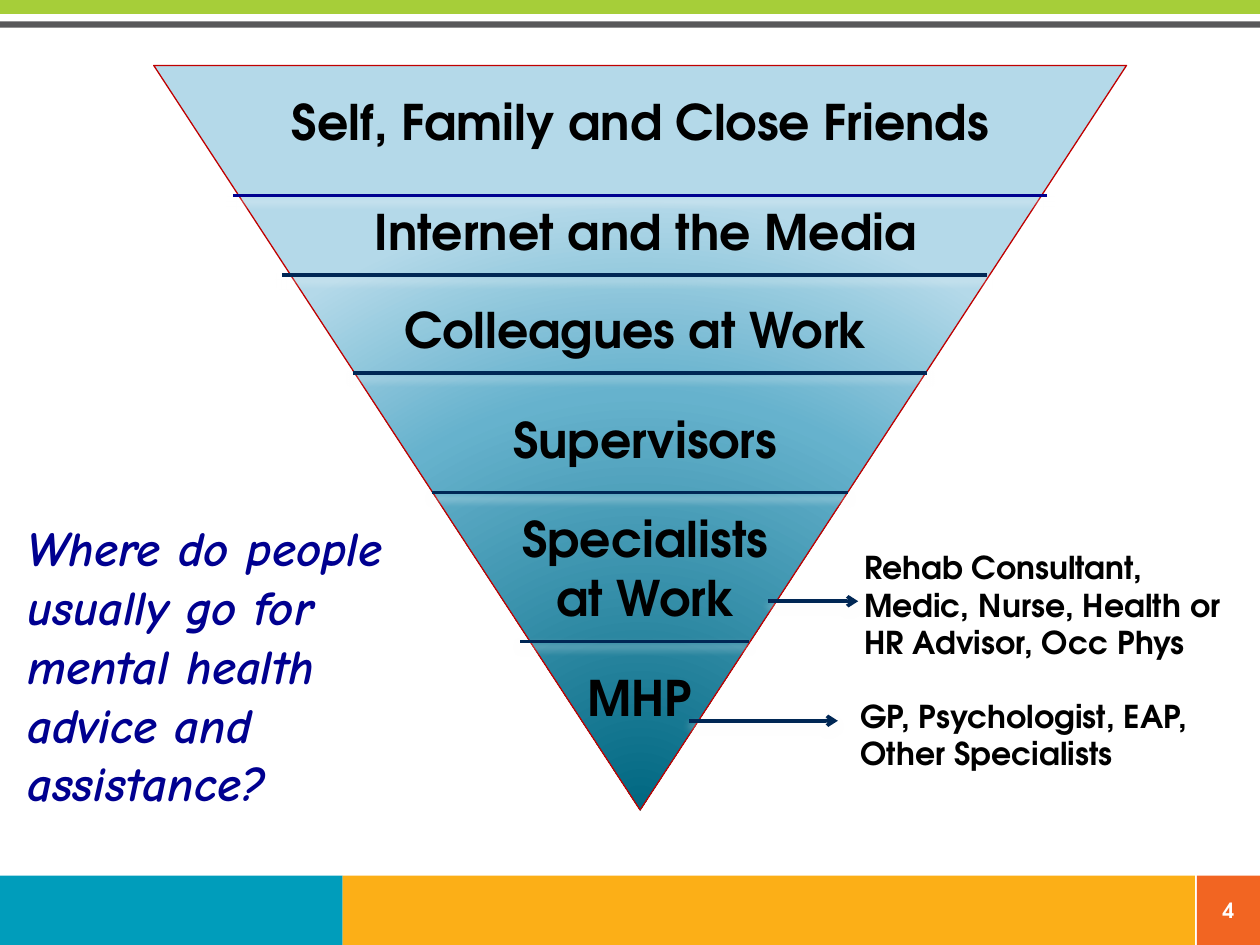
from dataclasses import dataclass

import pptx
import pptx.dml.color
import pptx.enum.shapes
import pptx.enum.text
import pptx.oxml
import pptx.oxml.ns
import pptx.util
from pptx.util import Cm

SHAPES = pptx.enum.shapes.MSO_SHAPE
ALIGN = pptx.enum.text.PP_ALIGN
ANCHOR = pptx.enum.text.MSO_ANCHOR
NAMESPACE = pptx.oxml.ns.nsdecls("a")


@dataclass(frozen=True)
class Theme:
    heading_font: str = "TeX Gyre Adventor"
    question_font: str = "Comic Neue"
    large: int = 28
    medium: int = 18
    small: int = 12
    black: str = "000000"
    white: str = "FFFFFF"
    blue: str = "000090"
    navy: str = "002755"
    red: str = "C00000"
    green: str = "A6CE39"
    gray: str = "58585A"
    teal: str = "009DBB"
    yellow: str = "FCAF17"
    orange: str = "F26522"
    gradient: tuple = ((0, "006781"), (68, "66B2CD"), (100, "B4D9E9"))
    glow: str = "FFFFFF"


THEME = Theme()


def rgb(color):
    return pptx.dml.color.RGBColor.from_string(color)


def write_text(shape, text, font=THEME.heading_font, size=THEME.large,
               color=THEME.black, align=ALIGN.LEFT, italic=False):
    shape.text_frame.word_wrap = True
    paragraph = shape.text_frame.paragraphs[0]
    paragraph.alignment = align
    run = paragraph.add_run()
    run.text = text
    run.font.name = font
    run.font.size = pptx.util.Pt(size)
    run.font.bold = True
    run.font.italic = italic
    run.font.color.rgb = rgb(color)


def add_text(slide, box, text, **text_format):
    shape = slide.shapes.add_textbox(*map(Cm, box))
    write_text(shape, text, **text_format)


def add_bar(slide, box, color):
    bar = slide.shapes.add_shape(SHAPES.RECTANGLE, *map(Cm, box))
    bar.shadow.inherit = False
    bar.fill.solid()
    bar.fill.fore_color.rgb = rgb(color)
    bar.line.fill.background()
    return bar


def add_glow(shape):
    """Add a soft pale shadow just below the shape."""
    shape._element.spPr.append(pptx.oxml.parse_xml(
        f'<a:effectLst {NAMESPACE}><a:outerShdw blurRad="57150" dist="38100" '
        f'dir="5400000" rotWithShape="0"><a:srgbClr val="{THEME.glow}">'
        f'<a:alpha val="48000"/></a:srgbClr></a:outerShdw></a:effectLst>'))


def add_line(slide, left, right, top, color=THEME.navy, arrow=False):
    """Draw a level line, with an arrowhead at its right end if asked."""
    line = slide.shapes.add_connector(
        pptx.enum.shapes.MSO_CONNECTOR.STRAIGHT,
        Cm(left), Cm(top), Cm(right), Cm(top))
    line.line.color.rgb = rgb(color)
    line.line.width = pptx.util.Pt(2)
    if arrow:
        line.line._get_or_add_ln().append(
            pptx.oxml.parse_xml(f'<a:tailEnd {NAMESPACE} type="arrow"/>'))
    add_glow(line)


def fill_radially(shape):
    """Fill with rings that spread from a centre below the shape."""
    stops = "".join(
        f'<a:gs pos="{position * 1000}"><a:srgbClr val="{color}"/></a:gs>'
        for position, color in THEME.gradient)
    shape.fill.background()
    properties = shape._element.spPr
    empty_fill = properties.find(pptx.oxml.ns.qn("a:noFill"))
    properties.replace(empty_fill, pptx.oxml.parse_xml(
        f'<a:gradFill {NAMESPACE} rotWithShape="1"><a:gsLst>{stops}</a:gsLst>'
        '<a:path path="circle"><a:fillToRect l="50000" t="130000" '
        'r="50000" b="-30000"/></a:path></a:gradFill>'))


def add_header(slide, box):
    left, top, width, height = box
    add_bar(slide, (left, top, width, 0.28), THEME.green)
    add_bar(slide, (left, top + height - 0.13, width, 0.13), THEME.gray)


def add_footer(slide, box, number):
    left, top, width, height = box
    teal_width, number_width, gap = 6.91, 1.27, 0.04
    yellow_width = width - teal_width - number_width - gap
    add_bar(slide, (left, top, teal_width, height), THEME.teal)
    add_bar(slide, (left + teal_width, top, yellow_width, height), THEME.yellow)
    tile = add_bar(slide, (left + width - number_width, top, number_width, height),
                   THEME.orange)
    frame = tile.text_frame
    frame.margin_left = frame.margin_right = 0
    frame.margin_top = frame.margin_bottom = 0
    frame.vertical_anchor = ANCHOR.MIDDLE
    write_text(tile, number, size=THEME.small, color=THEME.white, align=ALIGN.CENTER)


def add_pyramid(slide, box):
    left, top, width, height = box
    triangle = slide.shapes.add_shape(SHAPES.FLOWCHART_MERGE, *map(Cm, box))
    fill_radially(triangle)
    triangle.line.color.rgb = rgb(THEME.red)
    triangle.line.width = pptx.util.Pt(0.75)
    add_glow(triangle)

    dividers = [  # left, right, top
        (1.6, 18.01, 2.62, THEME.blue),
        (2.59, 16.79, 4.22, THEME.navy),
        (4.01, 15.59, 6.2, THEME.navy),
        (5.61, 13.99, 8.61, THEME.navy),
        (7.39, 11.99, 11.61, THEME.navy),
    ]
    for start, end, offset, color in dividers:
        add_line(slide, left + start, left + end, top + offset, color)

    levels = [  # left, top, width, height
        ("Self, Family and Close Friends", 2.01, 0.41, 15.6, 1.45),
        ("Internet and the Media", 4.01, 2.62, 11.81, 1.45),
        ("Colleagues at Work", 3.81, 4.6, 11.81, 1.45),
        ("Supervisors", 4.8, 6.81, 10.21, 1.45),
        ("Specialists at Work", 6.81, 8.81, 6.2, 2.64),
        ("MHP", 8.2, 12.02, 3.2, 1.45),
    ]
    for text, x, y, label_width, label_height in levels:
        add_text(slide, (left + x, top + y, label_width, label_height), text,
                 align=ALIGN.CENTER)


def add_callout(slide, box, text, arrow):
    """Place a note and its arrow, given as start, end and drop from the box corner."""
    left, top = box[:2]
    start, end, drop = arrow
    add_line(slide, left + start, left + end, top + drop, arrow=True)
    add_text(slide, box, text, size=THEME.medium)


def main():
    presentation = pptx.Presentation()
    presentation.slide_width, presentation.slide_height = Cm(25.4), Cm(19.05)
    slide = presentation.slides.add_slide(presentation.slide_layouts[6])

    add_header(slide, (0, 0, 25.4, 0.56))
    add_footer(slide, (0, 17.65, 25.4, 1.4), "4")
    add_pyramid(slide, (3.1, 1.32, 19.61, 15.01))
    add_text(slide, (0.3, 10.31, 8.61, 6.25),
             "Where do people usually go for mental health advice and assistance?",
             font=THEME.question_font, color=THEME.blue, italic=True)
    add_callout(slide, (17.17, 10.92, 8.23, 2.57),
                "Rehab Consultant, Medic, Nurse, Health or HR Advisor, Occ Phys",
                arrow=(-1.68, 0.13, 1.2))
    add_callout(slide, (17.09, 13.92, 7.8, 1.8),
                "GP, Psychologist, EAP, Other Specialists",
                arrow=(-3.2, -0.2, 0.61))
    presentation.save("out.pptx")


if __name__ == "__main__":
    main()
